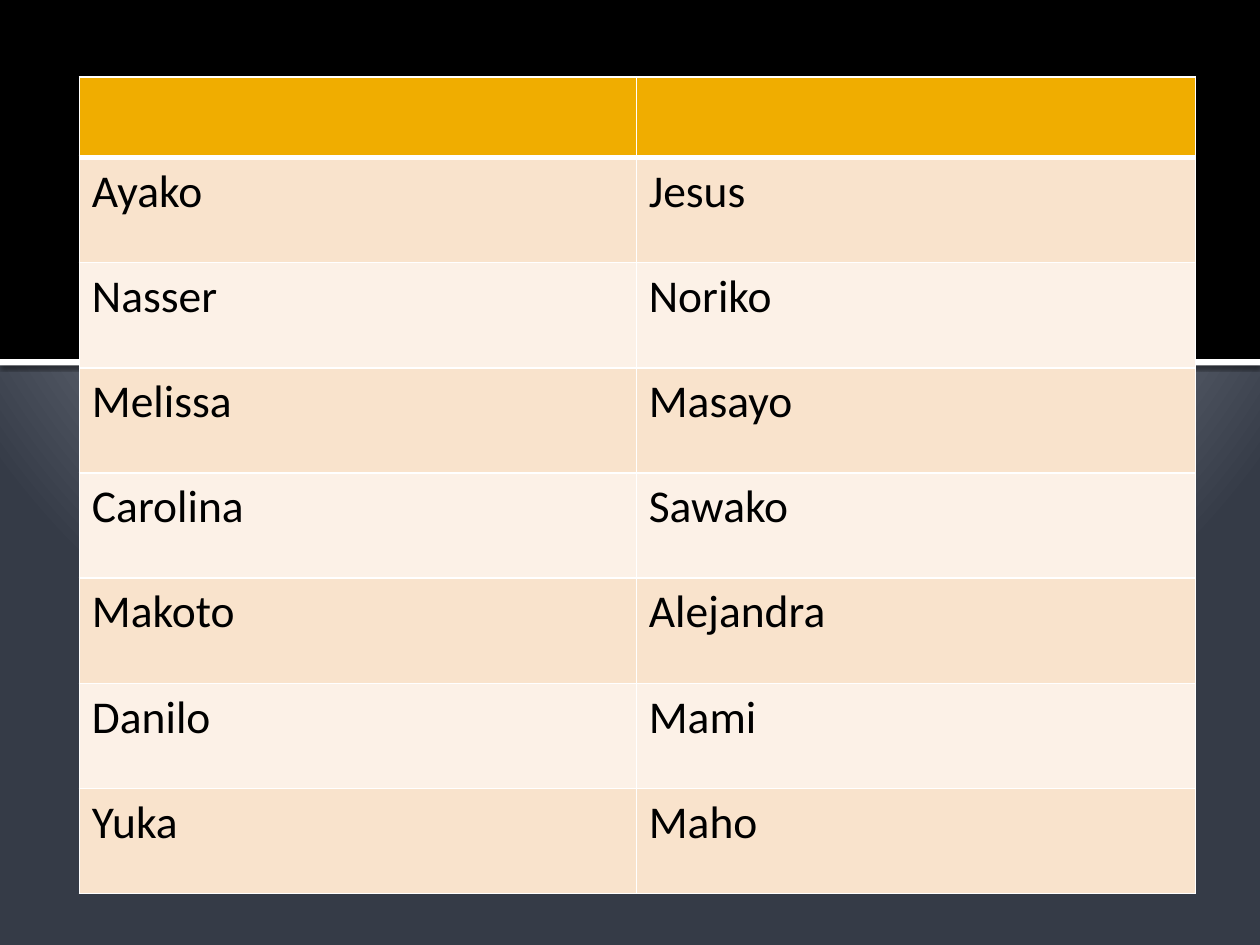
from dataclasses import dataclass

from lxml import etree
from pptx import Presentation
from pptx import util as u
from pptx.dml.color import RGBColor
from pptx.enum import shapes
from pptx.oxml import parse_xml
from pptx.oxml.ns import nsdecls, qn


@dataclass(frozen=True)
class Theme:
    font: str = "Calibri"
    body_size: float = 26
    black: str = "000000"
    white: str = "FFFFFF"
    header: str = "F0AD00"
    bands: tuple = ("F9E3CC", "FCF1E7")
    glow: tuple = ((0, "C1C5D3"), (12, "C1C5D3"), (20, "BFC4D2"), (100, "353B47"))
    rule: float = 1
    header_rule: float = 3


class Deck:
    def __init__(self, theme, width, height):
        self.theme = theme
        self.prs = Presentation()
        self.prs.slide_width = u.Inches(width)
        self.prs.slide_height = u.Inches(height)
        self.slide = None

    def add_slide(self):
        self.slide = self.prs.slides.add_slide(self.prs.slide_layouts[6])

    def background(self, stops):
        """Radial glow centred above the slide."""
        gs = "".join(
            f'<a:gs pos="{pos * 1000}"><a:srgbClr val="{color}"/></a:gs>'
            for pos, color in stops
        )
        bg = parse_xml(
            f'<p:bg {nsdecls("p", "a")}><p:bgPr><a:gradFill rotWithShape="1">'
            f'<a:gsLst>{gs}</a:gsLst><a:path path="circle">'
            '<a:fillToRect l="10000" t="-25000" r="10000" b="125000"/></a:path>'
            '</a:gradFill><a:effectLst/></p:bgPr></p:bg>'
        )
        self.slide.element.find(qn("p:cSld")).insert(0, bg)

    def band(self, left, top, width, height, color, shadow=False):
        box = [u.Inches(v) for v in (left, top, width, height)]
        sp = self.slide.shapes.add_shape(shapes.MSO_SHAPE.RECTANGLE, *box)
        sp.fill.solid()
        sp.fill.fore_color.rgb = RGBColor.from_string(color)
        sp.line.fill.background()
        sp.shadow.inherit = False
        if shadow:
            effects = sp.element.spPr.find(qn("a:effectLst"))
            effects.append(parse_xml(
                f'<a:outerShdw {nsdecls("a")} blurRad="{u.Pt(2.5)}" '
                f'dist="{u.Pt(0.8)}" dir="5400000" algn="tl" rotWithShape="0">'
                f'<a:srgbClr val="{self.theme.black}"><a:alpha val="60000"/>'
                '</a:srgbClr></a:outerShdw>'
            ))

    def borders(self, cell, bottom):
        tc_pr = cell._tc.get_or_add_tcPr()
        rule = self.theme.rule
        for side, width in (("L", rule), ("R", rule), ("T", rule), ("B", bottom)):
            ln = etree.SubElement(tc_pr, qn(f"a:ln{side}"), w=str(u.Pt(width)))
            fill = etree.SubElement(ln, qn("a:solidFill"))
            etree.SubElement(fill, qn("a:srgbClr"), val=self.theme.white)

    def cell(self, cell, value, color, bottom):
        self.borders(cell, bottom)
        cell.fill.solid()
        cell.fill.fore_color.rgb = RGBColor.from_string(color)
        if value:
            r = cell.text_frame.paragraphs[0].add_run()
            r.text = value
            r.font.name = self.theme.font
            r.font.size = u.Pt(self.theme.body_size)
            r.font.color.rgb = RGBColor.from_string(self.theme.black)

    def table(self, left, top, widths, header_height, row_height, rows):
        """Banded table below an empty header row."""
        t = self.theme
        heights = [header_height] + [row_height] * len(rows)
        box = [u.Inches(v) for v in (left, top, sum(widths), sum(heights))]
        tbl = self.slide.shapes.add_table(len(heights), len(widths), *box).table
        for column, width in zip(tbl.columns, widths):
            column.width = u.Inches(width)
        for row, height in zip(tbl.rows, heights):
            row.height = u.Inches(height)
        for cell in tbl.rows[0].cells:
            self.cell(cell, "", t.header, t.header_rule)
        for i, names in enumerate(rows):
            for cell, name in zip(tbl.rows[i + 1].cells, names):
                self.cell(cell, name, t.bands[i % 2], t.rule)


def main():
    theme = Theme()
    deck = Deck(theme, 10, 7.5)
    deck.add_slide()

    # Backdrop: glow, dark upper half and white dividing rule
    deck.background(theme.glow)
    deck.band(0, 0, 10, 2.85, theme.black)
    deck.band(0, 2.85, 10, 0.05, theme.white, shadow=True)

    # Pairs of names
    pairs = [
        ("Ayako", "Jesus"),
        ("Nasser", "Noriko"),
        ("Melissa", "Masayo"),
        ("Carolina", "Sawako"),
        ("Makoto", "Alejandra"),
        ("Danilo", "Mami"),
        ("Yuka", "Maho"),
    ]
    deck.table(0.63, 0.61, (4.42, 4.44), 0.64, 0.835, pairs)

    deck.prs.save("out.pptx")


if __name__ == "__main__":
    main()
